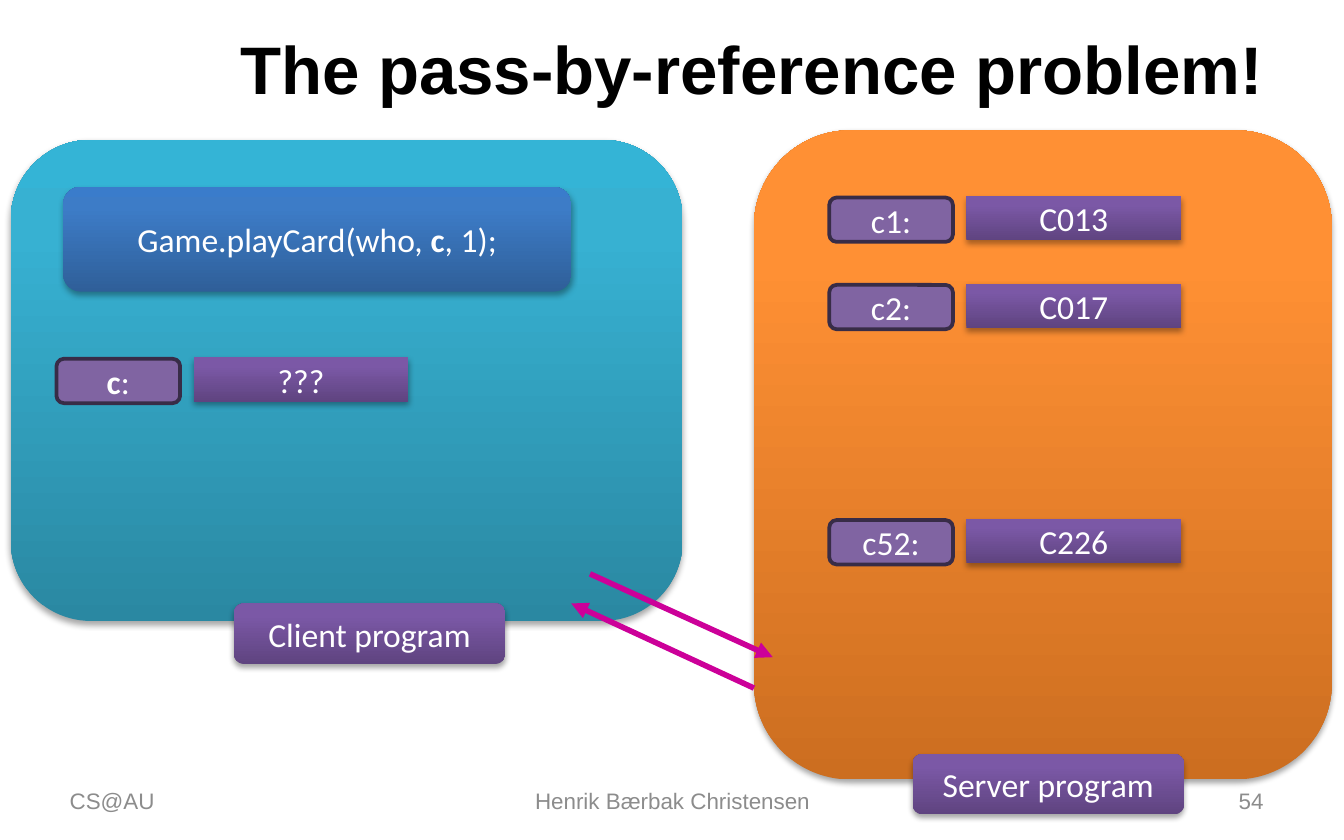
from copy import deepcopy

from lxml import etree
from pptx import Presentation
from pptx import util as u
from pptx.dml.color import RGBColor
from pptx.enum import shapes, text
from pptx.oxml.ns import qn

PX = 9144  # EMU per px, 100 px to the inch

THEME = {
    "title": ("Arial", 36, "000000"),
    "footer": ("Arial", 12, "8C8C8C"),
    "label": ("Calibri", 18, "FFFFFF"),
    # Gradient colours run from bottom to top
    "orange": ("CC6E20", "FF9034", "FF9136"),
    "teal": ("2A88A2", "37B1D2", "34B4D6"),
    "purple": ("5F4480", "7B58A6", "7C57A8"),
    "blue": ("2F5F99", "3D7CC7", "3A7CCB"),
    "key_fill": "8064A2",
    "key_line": "382C47",
    "call": "CC0099",
}
STOPS = (0, 0.8, 1)

# Runs are (wording, bold)
TITLE = [("The pass-by-reference problem!", True)]
FOOTERS = [
    ("CS@AU", (42, 579, 233, 33), text.PP_ALIGN.LEFT),
    ("Henrik Bærbak Christensen", (342, 579, 317, 33), text.PP_ALIGN.CENTER),
    ("54", (717, 579, 233, 33), text.PP_ALIGN.RIGHT),
]
PANELS = [((561, 97, 430, 483), "orange"), ((8, 104, 500, 358), "teal")]
CALLS = [((439, 427), (575, 489)), ((561, 512), (425, 449))]
PROGRAMS = [("Client program", 174, 449), ("Server program", 679, 561)]
PROGRAM_SIZE = (202, 45)
STATEMENT = [("Game.playCard(who, ", False), ("c", True), (", 1);", False)]
STATEMENT_BOX = (47, 139, 378, 78)

# Variable runs, value, left, top
CLIENT_CARD = ([("c", True), (":", False)], "???", 42, 266)
SERVER_CARDS = [
    ([("c1:", False)], "C013", 617, 146),
    ([("c2:", False)], "C017", 617, 211),
    ([("c52:", False)], "C226", 617, 386),
]
KEY_SIZE, VALUE_SIZE = (92, 33), (160, 33)
VALUE_OFFSET, KEY_DROP = 102, 1

ROUND = shapes.MSO_SHAPE.ROUNDED_RECTANGLE
RECT = shapes.MSO_SHAPE.RECTANGLE


def emu(lengths):
    return [n * PX for n in lengths]


def rgb(name):
    return RGBColor.from_string(name)


def write(frame, runs, style, align):
    font_name, size, colour = THEME[style]
    frame.word_wrap = True
    frame.vertical_anchor = text.MSO_ANCHOR.MIDDLE
    line = frame.paragraphs[0]
    line.alignment = align
    for wording, bold in runs:
        run = line.add_run()
        run.text = wording
        run.font.name, run.font.size, run.font.bold = font_name, u.Pt(size), bold
        run.font.color.rgb = rgb(colour)


def add_shadow(shape):
    """Give the shape a soft shadow straight below it."""
    effects = shape._element.spPr.find(qn("a:effectLst"))
    shadow = etree.SubElement(effects, qn("a:outerShdw"), blurRad="40000",
                              dist="23000", dir="5400000", rotWithShape="0")
    black = etree.SubElement(shadow, qn("a:srgbClr"), val="000000")
    etree.SubElement(black, qn("a:alpha"), val="35000")


def fill_gradient(shape, colours):
    shape.fill.gradient()
    shape.fill.gradient_angle = 90
    stop_list = shape._element.spPr.find(qn("a:gradFill")).find(qn("a:gsLst"))
    stop_list.append(deepcopy(stop_list[-1]))
    for stop, position, colour in zip(shape.fill.gradient_stops, STOPS, colours):
        stop.position = position
        stop.color.rgb = rgb(colour)


def add_block(parent, kind, box, colours, runs=()):
    """Add a shaded, shadowed block with a centred label."""
    block = parent.add_shape(kind, *emu(box))
    block.shadow.inherit = False
    add_shadow(block)
    fill_gradient(block, THEME[colours])
    block.line.fill.background()
    write(block.text_frame, runs, "label", text.PP_ALIGN.CENTER)


def add_card(parent, variable, value, left, top):
    """Add a value block with its variable name on the left."""
    add_block(parent, RECT, (left + VALUE_OFFSET, top, *VALUE_SIZE), "purple",
              [(value, False)])
    key = parent.add_shape(ROUND, *emu((left, top + KEY_DROP, *KEY_SIZE)))
    key.shadow.inherit = False
    key.fill.solid()
    key.fill.fore_color.rgb = rgb(THEME["key_fill"])
    key.line.color.rgb = rgb(THEME["key_line"])
    key.line.width = u.Pt(2)
    write(key.text_frame, variable, "label", text.PP_ALIGN.CENTER)


def add_call(parent, start, end):
    """Add an arrow from start to end."""
    arrow = parent.add_connector(shapes.MSO_CONNECTOR.STRAIGHT, *emu(start + end))
    arrow.line.color.rgb = rgb(THEME["call"])
    arrow.line.width = u.Pt(3)
    etree.SubElement(arrow.line._get_or_add_ln(), qn("a:tailEnd"), type="triangle")
    etree.SubElement(arrow._element.spPr, qn("a:effectLst"))


def main():
    deck = Presentation()
    deck.slide_width, deck.slide_height = emu((1000, 625))
    slide = deck.slides.add_slide(deck.slide_layouts.get_by_name("Title Only"))
    parts = slide.shapes

    title = parts.title
    title.left, title.top, title.width, title.height = emu((50, 18, 900, 65))
    write(title.text_frame, TITLE, "title", text.PP_ALIGN.RIGHT)
    for wording, box, align in FOOTERS:
        footer = parts.add_textbox(*emu(box))
        write(footer.text_frame, [(wording, False)], "footer", align)

    for box, colours in PANELS:
        add_block(parts, ROUND, box, colours)
    for start, end in CALLS:
        add_call(parts, start, end)
    for wording, left, top in PROGRAMS:
        add_block(parts, ROUND, (left, top, *PROGRAM_SIZE), "purple",
                  [(wording, False)])

    add_card(parts.add_group_shape().shapes, *CLIENT_CARD)
    add_block(parts, ROUND, STATEMENT_BOX, "blue", STATEMENT)
    for card in SERVER_CARDS:
        add_card(parts, *card)

    deck.save("out.pptx")


if __name__ == "__main__":
    main()
